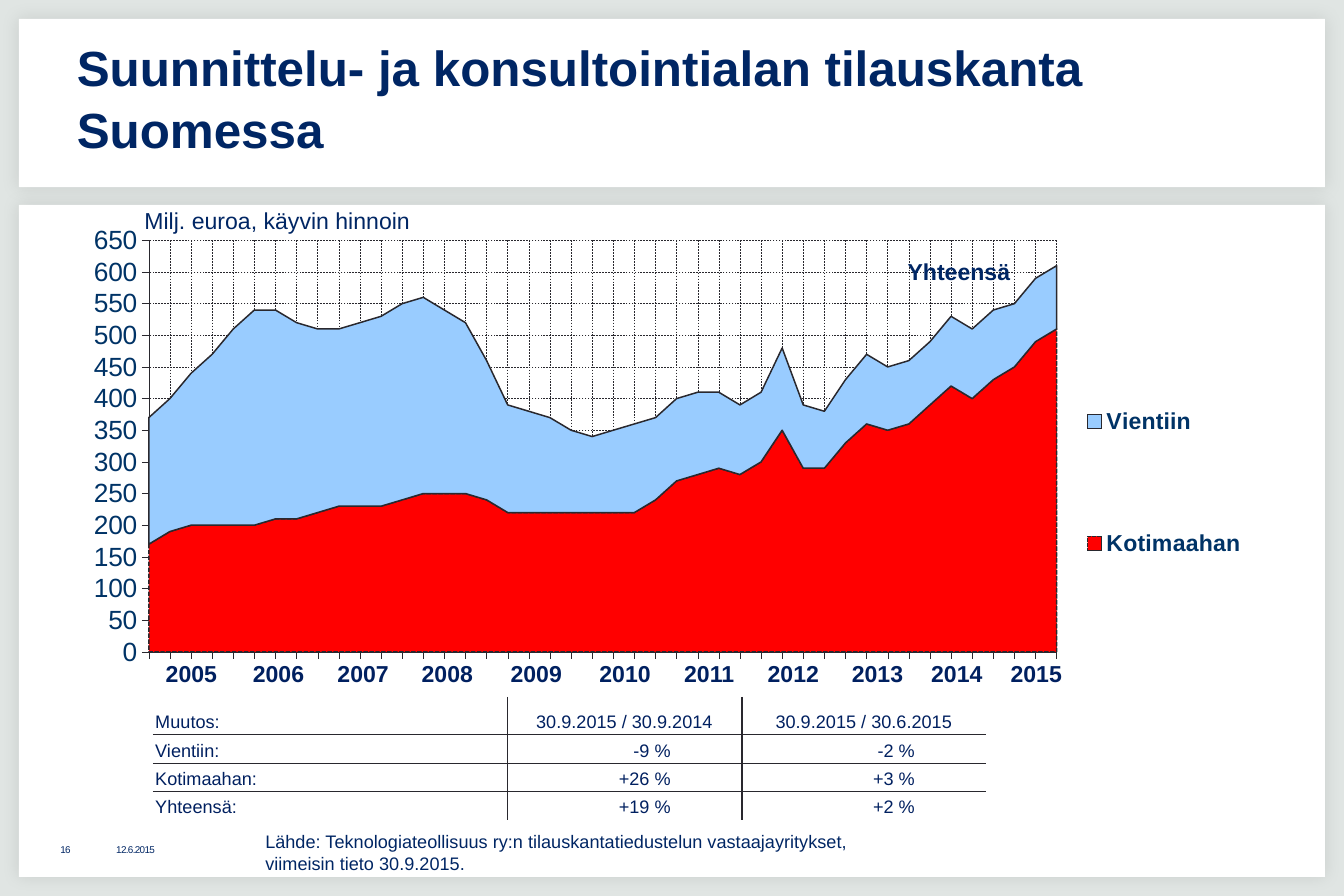
from dataclasses import dataclass

import pptx
import pptx.chart.data
import pptx.dml.color
import pptx.enum.chart
import pptx.enum.dml
import pptx.enum.shapes
import pptx.enum.text
import pptx.oxml
import pptx.oxml.ns
import pptx.util
from pptx.util import Inches, Pt

ALIGN = pptx.enum.text.PP_ALIGN
ANCHOR = pptx.enum.text.MSO_ANCHOR
DASH = pptx.enum.dml.MSO_LINE
NS = pptx.oxml.ns.nsdecls


@dataclass(frozen=True)
class Theme:
    font: str = "Arial"
    background: str = "E0E5E3"
    card: str = "FFFFFF"
    navy: str = "002664"
    table_text: str = "002060"
    chart_text: str = "003366"
    rule: str = "29282E"
    domestic: str = "FF0000"
    export: str = "99CCFF"
    title: int = 30
    axis: int = 16
    label: int = 14
    body: int = 11
    footer: int = 6


T = Theme()

DOMESTIC = [
    170, 190, 200, 200, 200, 200, 210, 210, 220, 230, 230, 230, 240, 250, 250,
    250, 240, 220, 220, 220, 220, 220, 220, 220, 240, 270, 280, 290, 280, 300,
    350, 290, 290, 330, 360, 350, 360, 390, 420, 400, 430, 450, 490, 510]
EXPORT = [
    200, 210, 240, 270, 310, 340, 330, 310, 290, 280, 290, 300, 310, 310, 290,
    270, 220, 170, 160, 150, 130, 120, 130, 140, 130, 130, 130, 120, 110, 110,
    130, 100, 90, 100, 110, 100, 100, 100, 110, 110, 110, 100, 100, 100]
CHANGES = [
    ["Muutos:", "30.9.2015 / 30.9.2014", "30.9.2015 / 30.6.2015"],
    ["Vientiin:", "-9 %", "-2 %"],
    ["Kotimaahan:", "+26 %", "+3 %"],
    ["Yhteensä:", "+19 %", "+2 %"],
]
YEAR_WIDTHS = [0.71, 0.76, 0.67, 0.75, 0.75, 0.75, 0.67, 0.75, 0.67, 0.67, 0.67]


def rgb(color):
    return pptx.dml.color.RGBColor.from_string(color)


def style_font(font, size, color, bold=False):
    font.name, font.size, font.bold = T.font, Pt(size), bold
    font.color.rgb = rgb(color)


def style_line(line, width, dash=None):
    line.color.rgb = rgb(T.rule)
    line.width = Pt(width)
    if dash:
        line.dash_style = dash


def add_card(s, top, height):
    sp = s.shapes.add_shape(pptx.enum.shapes.MSO_SHAPE.RECTANGLE, Inches(0.16),
                            Inches(top), Inches(11.02), Inches(height))
    sp.fill.solid()
    sp.fill.fore_color.rgb = rgb(T.card)
    sp.line.fill.background()
    sp.shadow.inherit = False
    # Soft halo around the card
    sp.element.xpath(".//a:effectLst")[0].append(pptx.oxml.parse_xml(
        f'<a:outerShdw {NS("a")} blurRad="127000" dist="0" dir="2700000">'
        '<a:srgbClr val="000000"><a:alpha val="10000"/></a:srgbClr></a:outerShdw>'))


def add_text(s, text, left, top, width, height, size, bold=False, wrap=False):
    tf = s.shapes.add_textbox(Inches(left), Inches(top), Inches(width),
                              Inches(height)).text_frame
    tf.word_wrap = wrap
    tf.text = text
    for p in tf.paragraphs:
        style_font(p.font, size, T.navy, bold)
    return tf


def add_footer(s, text, left, width):
    tf = add_text(s, text, left, 7.09, width, 0.16, T.footer, wrap=True)
    tf.vertical_anchor = ANCHOR.MIDDLE
    tf.margin_left = tf.margin_right = tf.margin_top = tf.margin_bottom = Inches(0.04)
    for r in tf.paragraphs[0].runs:
        style_font(r.font, T.footer, T.navy)
        r.font._element.set("spc", "-40")


def set_layout(parent, x, y, w, h, inner=False):
    """Place the plot area or the legend by fractions of the chart."""
    target = '<c:layoutTarget val="inner"/>' if inner else ""
    for old in parent.findall(pptx.oxml.ns.qn("c:layout")):
        parent.remove(old)
    layout = pptx.oxml.parse_xml(
        f'<c:layout {NS("c")}><c:manualLayout>{target}'
        '<c:xMode val="edge"/><c:yMode val="edge"/>'
        f'<c:x val="{x}"/><c:y val="{y}"/><c:w val="{w}"/><c:h val="{h}"/>'
        '</c:manualLayout></c:layout>')
    parent.insert(0 if inner else 1, layout)


def add_order_chart(s):
    data = pptx.chart.data.CategoryChartData()
    data.categories = [str(n + 1) for n in range(len(DOMESTIC))]
    data.add_series("Kotimaahan", DOMESTIC)
    data.add_series("Vientiin", EXPORT)
    chart = s.shapes.add_chart(
        pptx.enum.chart.XL_CHART_TYPE.AREA_STACKED, Inches(0.55), Inches(1.8),
        Inches(10.08), Inches(3.82), data).chart
    chart.has_title = False
    style_font(chart.font, T.label, T.chart_text, True)

    # Series
    looks = [(T.domestic, DASH.SQUARE_DOT), (T.export, None)]
    for series, (color, dash) in zip(chart.plots[0].series, looks):
        series.format.fill.solid()
        series.format.fill.fore_color.rgb = rgb(color)
        style_line(series.format.line, 0.9, dash)

    # Axes
    for axis in (chart.category_axis, chart.value_axis):
        axis.has_major_gridlines = True
        style_line(axis.major_gridlines.format.line, 0.25, DASH.DASH)
        style_line(axis.format.line, 0.23)
        axis.major_tick_mark = pptx.enum.chart.XL_TICK_MARK.OUTSIDE
        axis.minor_tick_mark = pptx.enum.chart.XL_TICK_MARK.NONE
    chart.category_axis.tick_label_position = pptx.enum.chart.XL_TICK_LABEL_POSITION.NONE
    values = chart.value_axis
    values.minimum_scale, values.maximum_scale, values.major_unit = 0, 650, 50
    values.tick_labels.number_format = "#,##0"
    values.tick_labels.number_format_is_linked = False
    style_font(values.tick_labels.font, T.axis, T.chart_text)

    # Legend and plot placement
    chart.has_legend = True
    legend = chart.legend
    legend.position = pptx.enum.chart.XL_LEGEND_POSITION.RIGHT
    legend.include_in_layout = False
    style_font(legend.font, T.label, T.chart_text, True)
    set_layout(legend._element, 0.85, 0.22, 0.14, 0.75)
    plot_area = chart.element.xpath(".//c:plotArea")[0]
    set_layout(plot_area, 0.07, 0.06, 0.76, 0.91, inner=True)
    for between in plot_area.xpath(".//c:crossBetween"):
        between.set("val", "midCat")


def add_plain_table(s, rows, left, top, widths, heights, size, bold=False):
    gf = s.shapes.add_table(len(rows), len(widths), Inches(left), Inches(top),
                            Inches(sum(widths)), Inches(sum(heights)))
    table = gf.table
    table.first_row = table.horz_banding = False
    gf.element.xpath(".//a:tableStyleId")[0].text = "{2D5ABB26-0587-4C30-8999-92F81FD0307C}"
    for column, width in zip(table.columns, widths):
        column.width = Inches(width)
    for row, height, texts in zip(table.rows, heights, rows):
        row.height = Inches(height)
        for cell, text in zip(row.cells, texts):
            cell.text = text
            p = cell.text_frame.paragraphs[0]
            p.alignment = ALIGN.CENTER
            style_font(p.runs[0].font, size, T.table_text, bold)
            cell.fill.background()
    return table


def set_borders(cell, sides):
    tc_pr = cell._tc.get_or_add_tcPr()
    for i, side in enumerate(sides):
        tc_pr.insert(i, pptx.oxml.parse_xml(
            f'<a:ln{side} {NS("a")} w="12700"><a:solidFill>'
            f'<a:srgbClr val="{T.rule}"/></a:solidFill></a:ln{side}>'))


def add_change_table(s):
    table = add_plain_table(s, CHANGES, 1.29, 5.88, [2.99, 1.98, 2.06],
                            [0.32, 0.24, 0.24, 0.24], T.body)
    last_row, last_col = len(CHANGES) - 1, len(CHANGES[0]) - 1
    for i, row in enumerate(table.rows):
        for j, cell in enumerate(row.cells):
            figure = i > 0 and j > 0
            cell.vertical_anchor = ANCHOR.BOTTOM
            cell.margin_left = cell.margin_top = cell.margin_bottom = Inches(0.02)
            cell.margin_right = Inches(0.6 if figure else 0.02)
            if figure or j == 0:
                cell.text_frame.paragraphs[0].alignment = ALIGN.RIGHT if figure else ALIGN.LEFT
            # Inner rules only
            inside = {"L": j > 0, "R": j < last_col, "T": i > 0, "B": i < last_row}
            set_borders(cell, [side for side, drawn in inside.items() if drawn])


def main():
    prs = pptx.Presentation()
    prs.slide_width, prs.slide_height = Inches(11.34), Inches(7.56)
    s = prs.slides.add_slide(prs.slide_layouts[6])
    s.background.fill.solid()
    s.background.fill.fore_color.rgb = rgb(T.background)

    # Cards and footer
    add_card(s, 0.16, 1.42)
    add_card(s, 1.73, 5.67)
    add_footer(s, "12.6.2015", 0.94, 1.42)
    add_footer(s, "16", 0.47, 0.47)

    # Chart and its labels
    add_order_chart(s)
    title = add_text(s, "Suunnittelu- ja konsultointialan tilauskanta Suomessa",
                     0.55, 0.24, 9.84, 1.1, T.title, bold=True, wrap=True)
    title.paragraphs[0].line_spacing = 1.05
    add_text(s, "Yhteensä", 7.56, 2.12, 1.13, 0.33, T.label, bold=True)
    add_text(s, "Milj. euroa, käyvin hinnoin", 1.12, 1.69, 2.61, 0.33, T.label)
    add_text(s, "Lähde: Teknologiateollisuus ry:n tilauskantatiedustelun vastaajayritykset,\n"
             "viimeisin tieto 30.9.2015.", 2.14, 6.96, 5.23, 0.47, T.body)

    # Tables
    add_change_table(s)
    years = [str(year) for year in range(2005, 2016)]
    add_plain_table(s, [years], 1.26, 5.53, YEAR_WIDTHS, [0.48], T.label, bold=True)

    prs.save("out.pptx")


if __name__ == "__main__":
    main()
